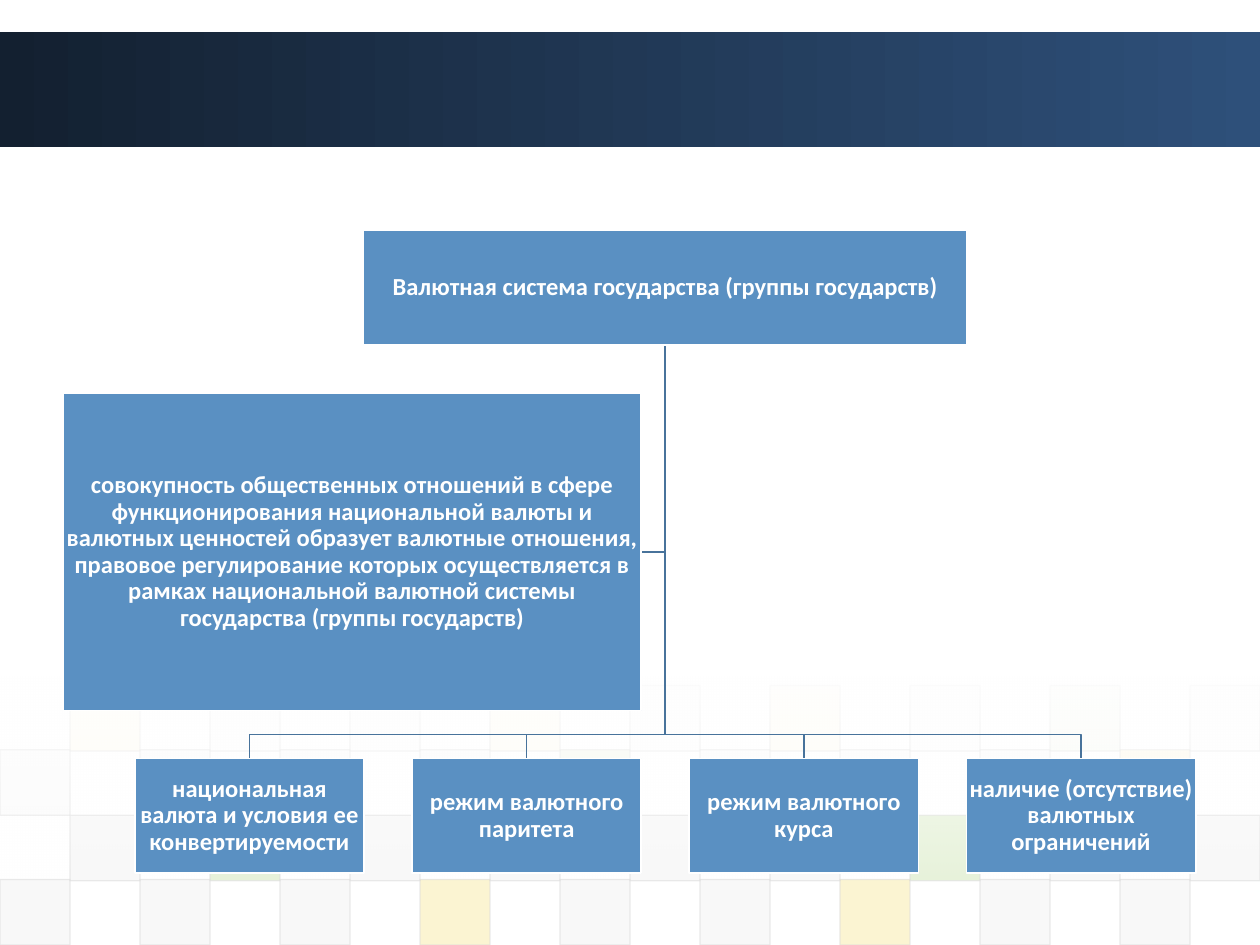
from lxml import etree
from pptx import Presentation
from pptx.dml.color import RGBColor
from pptx.enum import shapes, text
from pptx.oxml.ns import qn
from pptx.util import Inches, Pt

SYSTEM = "Валютная система государства (группы государств)"
DEFINITION = (
    "совокупность общественных отношений в сфере функционирования национальной "
    "валюты и валютных ценностей образует валютные отношения, правовое "
    "регулирование которых осуществляется в рамках национальной валютной "
    "системы государства (группы государств)"
)
ELEMENTS = [
    "национальная валюта и условия ее конвертируемости",
    "режим валютного паритета",
    "режим валютного курса",
    "наличие (отсутствие) валютных ограничений",
]

# Background tiles, one row each: top, opacity in percent, colour key per column
TILE_ROWS = [
    (5.44, 5, " y l l y g y l e l"),
    (5.95, 10, "g g g g e g g g y"),
    (6.47, 20, " g e g g g g e g g"),
    (6.98, 20, "g g g y g g y g g"),
]

THEME = {
    "font": "Calibri", "size": 14, "text": "FFFFFF",
    "box": "5A90C2", "edge": "FFFFFF", "wire": "48739B",
    "band": ("132030", "2E507A"), "fade": "FFFFFF",
    "tiles": {"g": "DDDDDD", "l": "EAEAEA", "y": "EFC821", "e": "8AC246"},
    "tile_edge": "DDDDDD",
}

SLIDE_W, SLIDE_H = 10, 7.5
TILE_W, TILE_H = SLIDE_W / 18, 0.52
TRUNK_X, GAP = 5.28, 0.38
ROOT_TOP, ROOT_W, BOX_H = 1.83, 4.79, 0.91
SIDE_TOP, SIDE_W, SIDE_H = 3.12, 4.59, 2.52
ELEMENT_TOP, ELEMENT_W = 6.02, 1.82


def rgb(key):
    return RGBColor.from_string(THEME[key])


def set_alpha(color_element, percent):
    alpha = etree.SubElement(color_element, qn("a:alpha"))
    alpha.set("val", str(percent * 1000))


def add_rect(slide, left, top, width, height):
    rect = slide.shapes.add_shape(
        shapes.MSO_SHAPE.RECTANGLE,
        Inches(left), Inches(top), Inches(width), Inches(height))
    rect.shadow.inherit = False
    rect.line.fill.background()
    return rect


def fill_gradient(rect, colors, angle, alphas=(100, 100)):
    rect.fill.gradient()
    rect.fill.gradient_angle = angle
    for stop, color in zip(rect.fill.gradient_stops, colors):
        stop.color.rgb = RGBColor.from_string(color)
    gradient = rect._element.spPr.find(qn("a:gradFill"))
    for color_element, alpha in zip(gradient.iter(qn("a:srgbClr")), alphas):
        set_alpha(color_element, alpha)


def add_background(slide):
    band = add_rect(slide, 0, 0.25, SLIDE_W, 0.92)
    fill_gradient(band, THEME["band"], 0)
    for top, opacity, keys in TILE_ROWS:
        for column, key in enumerate(keys):
            if key == " ":
                continue
            tile = add_rect(slide, column * TILE_W, top, TILE_W, TILE_H)
            tile.fill.solid()
            tile.fill.fore_color.rgb = RGBColor.from_string(THEME["tiles"][key])
            tile.line.color.rgb = rgb("tile_edge")
            tile.line.width = Pt(0.75)
            fill_color, edge_color = tile._element.spPr.iter(qn("a:srgbClr"))
            set_alpha(fill_color, opacity)
            set_alpha(edge_color, 60)
    fade = add_rect(slide, 0, 5.37, SLIDE_W, 1.62)
    fill_gradient(fade, (THEME["fade"],) * 2, 270, (90, 0))


def add_wire(slide, points):
    start, *rest = [(Inches(x), Inches(y)) for x, y in points]
    builder = slide.shapes.build_freeform(*start)
    builder.add_line_segments(rest, close=False)
    wire = builder.convert_to_shape()
    wire.shadow.inherit = False
    wire.fill.background()
    wire.line.color.rgb = rgb("wire")
    wire.line.width = Pt(1)


def add_box(slide, wording, left, top, width, height):
    box = add_rect(slide, left, top, width, height)
    box.fill.solid()
    box.fill.fore_color.rgb = rgb("box")
    box.line.color.rgb = rgb("edge")
    box.line.width = Pt(1)
    frame = box.text_frame
    frame.text = wording
    frame.word_wrap = True
    frame.vertical_anchor = text.MSO_ANCHOR.MIDDLE
    frame.margin_left = frame.margin_right = Inches(0.01)
    frame.margin_top = frame.margin_bottom = Inches(0.01)
    paragraph = frame.paragraphs[0]
    paragraph.alignment = text.PP_ALIGN.CENTER
    paragraph.line_spacing = 0.9
    font = paragraph.runs[0].font
    font.name, font.size, font.bold = THEME["font"], Pt(THEME["size"]), True
    font.color.rgb = rgb("text")


def add_chart_of_system(slide):
    pitch = ELEMENT_W + GAP
    row_left = TRUNK_X - (len(ELEMENTS) * pitch - GAP) / 2
    lefts = [row_left + i * pitch for i in range(len(ELEMENTS))]
    trunk_top = ROOT_TOP + BOX_H
    side_right = TRUNK_X - GAP / 2
    side_middle = SIDE_TOP + SIDE_H / 2
    bus = ELEMENT_TOP - GAP / 2

    add_wire(slide, [(TRUNK_X, trunk_top), (TRUNK_X, side_middle),
                     (side_right, side_middle)])
    for left in lefts:
        center = left + ELEMENT_W / 2
        add_wire(slide, [(TRUNK_X, trunk_top), (TRUNK_X, bus),
                         (center, bus), (center, ELEMENT_TOP)])

    add_box(slide, SYSTEM, TRUNK_X - ROOT_W / 2, ROOT_TOP, ROOT_W, BOX_H)
    for left, element in zip(lefts, ELEMENTS):
        add_box(slide, element, left, ELEMENT_TOP, ELEMENT_W, BOX_H)
    add_box(slide, DEFINITION, side_right - SIDE_W, SIDE_TOP, SIDE_W, SIDE_H)


def main():
    deck = Presentation()
    deck.slide_width, deck.slide_height = Inches(SLIDE_W), Inches(SLIDE_H)
    slide = deck.slides.add_slide(deck.slide_layouts[6])
    add_background(slide)
    add_chart_of_system(slide)
    deck.save("out.pptx")


if __name__ == "__main__":
    main()
